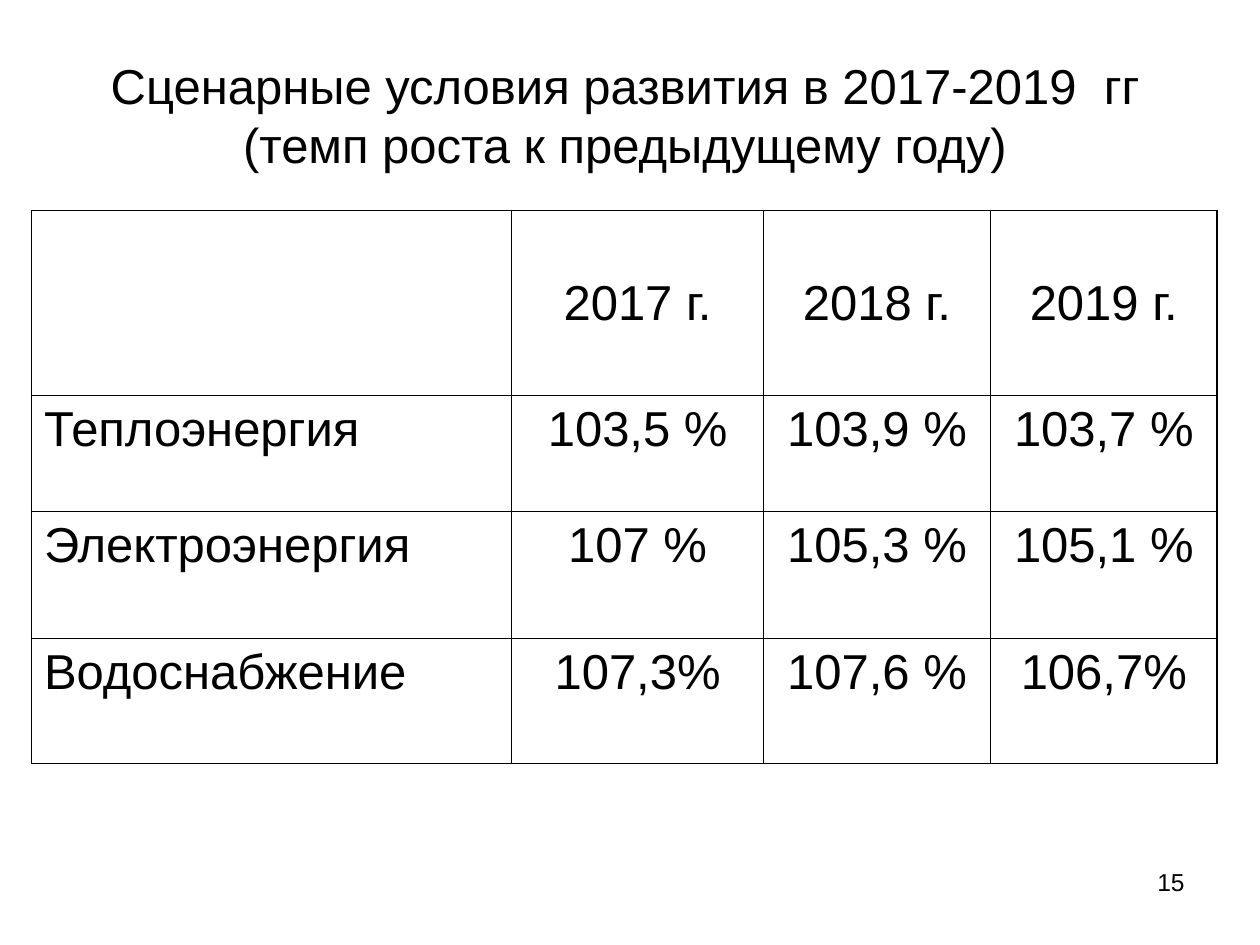
"""Build a slide with a table of yearly growth rates for utilities."""
from lxml import etree
from pptx import Presentation
from pptx import util as u
from pptx.dml.color import RGBColor
from pptx.enum import text
from pptx.oxml.ns import qn

HUES = {"ink": "000000", "page": "FFFFFF"}
SIDE = text.PP_ALIGN
MID = text.MSO_ANCHOR.MIDDLE


def write(frame, words, size, align):
    par = frame.paragraphs[0]
    par.alignment = align
    run = par.add_run()
    run.text = words
    run.font.size = u.Pt(size)
    run.font.name = "Arial"
    run.font.color.rgb = RGBColor.from_string(HUES["ink"])


def edge(cell):
    props = cell._tc.get_or_add_tcPr()
    for spot, tag in enumerate(("a:lnL", "a:lnR", "a:lnT", "a:lnB")):
        line = etree.Element(qn(tag), w=str(u.Pt(1)))
        fill = etree.SubElement(line, qn("a:solidFill"))
        etree.SubElement(fill, qn("a:srgbClr"), val=HUES["ink"])
        props.insert(spot, line)


deck = Presentation()
deck.slide_width, deck.slide_height = u.Inches(10), u.Inches(7.5)
slide = deck.slides.add_slide(deck.slide_layouts[5])
slide.background.fill.solid()
slide.background.fill.fore_color.rgb = RGBColor.from_string(HUES["page"])

title = slide.shapes.title
title.left, title.top = u.Inches(0.5), u.Inches(0.3)
title.width, title.height = u.Inches(8.92), u.Inches(1.22)
title.text_frame.word_wrap = True
title.text_frame.vertical_anchor = MID
write(title.text_frame,
      "Сценарные условия развития в 2017-2019  гг (темп роста к предыдущему году)",
      28, SIDE.CENTER)

rows = [
    ["", "2017 г.", "2018 г.", "2019 г."],
    ["Теплоэнергия", "103,5 %", "103,9 %", "103,7 %"],
    ["Электроэнергия", "107 %", "105,3 %", "105,1 %"],
    ["Водоснабжение", "107,3%", "107,6 %", "106,7%"],
]
wide = [3.81, 2, 1.8, 1.8]
high = [1.47, 0.92, 1.01, 0.99]
grid = slide.shapes.add_table(
    len(rows), len(wide), u.Inches(0.25), u.Inches(1.67),
    u.Inches(sum(wide)), u.Inches(sum(high))).table
grid.horz_banding = False
grid.first_row = False
for col, size in zip(grid.columns, wide):
    col.width = u.Inches(size)
for r, (row, size) in enumerate(zip(rows, high)):
    grid.rows[r].height = u.Inches(size)
    for c, words in enumerate(row):
        cell = grid.cell(r, c)
        cell.fill.background()
        cell.vertical_anchor = text.MSO_ANCHOR.TOP if r else MID
        edge(cell)
        if words:
            write(cell.text_frame, words, 28, SIDE.CENTER if c else SIDE.LEFT)

page = slide.shapes.add_textbox(
    u.Inches(7.17), u.Inches(6.83), u.Inches(2.33), u.Inches(0.52))
page.text_frame.word_wrap = True
write(page.text_frame, "15", 14, SIDE.RIGHT)

deck.save("out.pptx")
